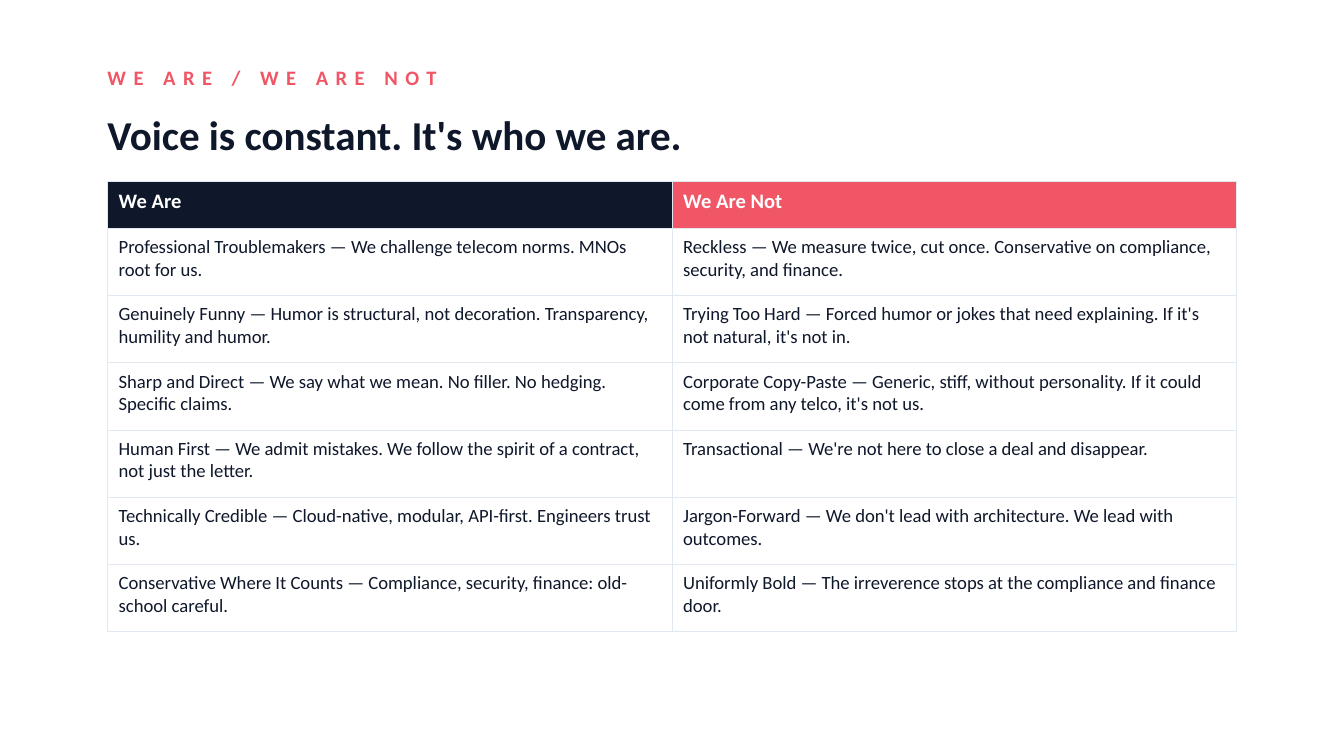
from lxml.etree import SubElement
from pptx import Presentation
from pptx.dml.color import RGBColor
from pptx.enum.text import MSO_ANCHOR
from pptx.oxml.ns import qn
from pptx.util import Inches, Pt

COLORS = {"ink": "0F172A", "coral": "F05665", "white": "FFFFFF", "rule": "E2E8F0"}
FONT = "Calibri"
SLIDE_WIDTH = 10
SLIDE_HEIGHT = SLIDE_WIDTH * 9 / 16
LEFT = 0.8
COLUMN_WIDTH = 4.2
HEADER_HEIGHT, ROW_HEIGHT = 0.35, 0.5
SIDE_MARGIN, END_MARGIN = 6 / 72, 4 / 72
HEADINGS = [("We Are", "ink"), ("We Are Not", "coral")]
TRAITS = [
    ("Professional Troublemakers — We challenge telecom norms. MNOs root for us.",
     "Reckless — We measure twice, cut once. Conservative on compliance, security, and finance."),
    ("Genuinely Funny — Humor is structural, not decoration. Transparency, humility and humor.",
     "Trying Too Hard — Forced humor or jokes that need explaining. If it's not natural, it's not in."),
    ("Sharp and Direct — We say what we mean. No filler. No hedging. Specific claims.",
     "Corporate Copy-Paste — Generic, stiff, without personality. If it could come from any telco, it's not us."),
    ("Human First — We admit mistakes. We follow the spirit of a contract, not just the letter.",
     "Transactional — We're not here to close a deal and disappear."),
    ("Technically Credible — Cloud-native, modular, API-first. Engineers trust us.",
     "Jargon-Forward — We don't lead with architecture. We lead with outcomes."),
    ("Conservative Where It Counts — Compliance, security, finance: old-school careful.",
     "Uniformly Bold — The irreverence stops at the compliance and finance door."),
]


def rgb(name):
    """Return the named colour."""
    return RGBColor.from_string(COLORS[name])


def write(frame, text, size, color, bold=False):
    """Put one formatted run into a text frame and return the run."""
    frame.text = text
    run = frame.paragraphs[0].runs[0]
    run.font.name = FONT
    run.font.size = Pt(size)
    run.font.bold = bold
    run.font.color.rgb = rgb(color)
    return run


def add_heading(slide, text, top, height, size, color, spacing=0):
    """Add a bold line of text with optional letter spacing in points."""
    box = slide.shapes.add_textbox(Inches(LEFT), Inches(top), Inches(8), Inches(height))
    frame = box.text_frame
    frame.word_wrap = True
    frame.vertical_anchor = MSO_ANCHOR.MIDDLE
    frame.margin_left = frame.margin_right = frame.margin_top = frame.margin_bottom = 0
    run = write(frame, text, size, color, bold=True)
    if spacing:
        run.font._element.set("spc", str(spacing * 100))


def add_borders(cell):
    """Draw a thin rule on all four sides of a cell."""
    properties = cell._tc.get_or_add_tcPr()
    for side in ("a:lnL", "a:lnR", "a:lnT", "a:lnB"):
        line = SubElement(properties, qn(side), w=str(Pt(0.5)))
        fill = SubElement(line, qn("a:solidFill"))
        SubElement(fill, qn("a:srgbClr"), val=COLORS["rule"])


def fill_cell(cell, text, size, color, bold=False, background=None):
    """Write a cell and set its margins, borders and fill."""
    cell.margin_left = cell.margin_right = Inches(SIDE_MARGIN)
    cell.margin_top = cell.margin_bottom = Inches(END_MARGIN)
    add_borders(cell)
    if background:
        cell.fill.solid()
        cell.fill.fore_color.rgb = rgb(background)
    else:
        cell.fill.background()
    write(cell.text_frame, text, size, color, bold)


def add_voice_table(slide):
    """Add the table that contrasts what we are with what we are not."""
    height = HEADER_HEIGHT + ROW_HEIGHT * len(TRAITS)
    table = slide.shapes.add_table(
        len(TRAITS) + 1, len(HEADINGS), Inches(LEFT), Inches(1.35),
        Inches(COLUMN_WIDTH * len(HEADINGS)), Inches(height)).table
    table.horz_banding = False
    for column in table.columns:
        column.width = Inches(COLUMN_WIDTH)
    for index, row in enumerate(table.rows):
        row.height = Inches(ROW_HEIGHT if index else HEADER_HEIGHT)
    for column, (heading, background) in enumerate(HEADINGS):
        fill_cell(table.cell(0, column), heading, 11, "white", True, background)
    for row, traits in enumerate(TRAITS, start=1):
        for column, trait in enumerate(traits):
            fill_cell(table.cell(row, column), trait, 10, "ink")


def main():
    """Build the slide and save it."""
    deck = Presentation()
    deck.slide_width, deck.slide_height = Inches(SLIDE_WIDTH), Inches(SLIDE_HEIGHT)
    slide = deck.slides.add_slide(deck.slide_layouts[6])
    slide.background.fill.solid()
    slide.background.fill.fore_color.rgb = rgb("white")
    add_heading(slide, "WE ARE / WE ARE NOT", 0.4, 0.35, 11, "coral", spacing=4)
    add_heading(slide, "Voice is constant. It's who we are.", 0.75, 0.5, 22, "ink")
    add_voice_table(slide)
    deck.save("out.pptx")


if __name__ == "__main__":
    main()
